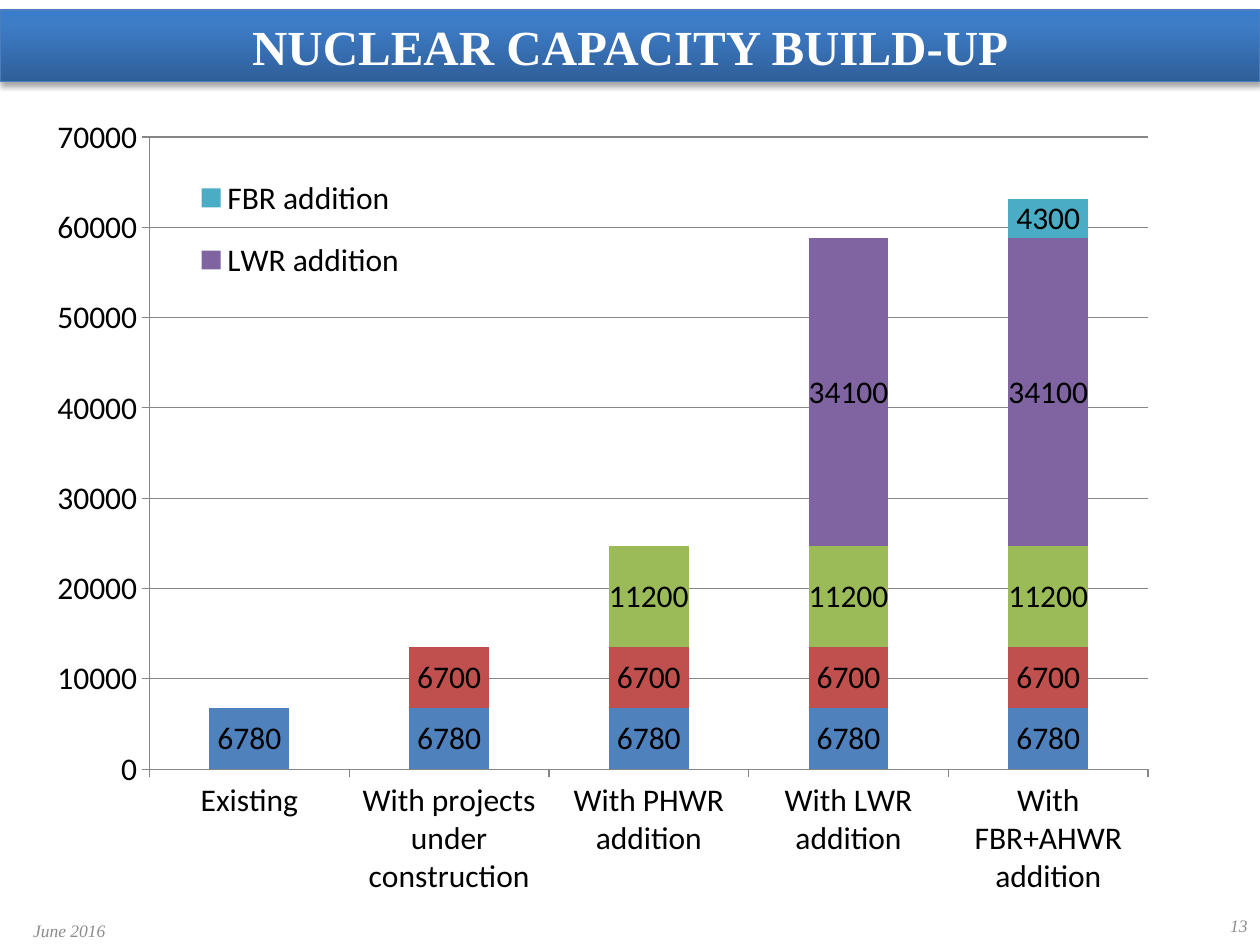
from lxml import etree
from pptx import Presentation
from pptx.chart.data import CategoryChartData
from pptx.dml.color import RGBColor
from pptx.enum.chart import XL_CHART_TYPE, XL_LEGEND_POSITION, XL_TICK_MARK
from pptx.enum.text import MSO_ANCHOR, PP_ALIGN
from pptx.oxml import parse_xml
from pptx.oxml.ns import nsdecls, qn
from pptx.util import Inches, Pt

COLORS = {
    "white": "FFFFFF", "black": "000000", "footer": "8C8C8C", "grid": "868686",
    "banner_line": "4B7EBC", "banner_dark": "2F5F99",
    "banner_mid": "3D7CC7", "banner_light": "3A7CCB",
}
HEADING = "NUCLEAR CAPACITY BUILD-UP"
STAGES = [
    "Existing", "With projects under construction", "With PHWR addition",
    "With LWR addition", "With FBR+AHWR addition",
]
ADDITIONS = [
    ("Existing", 6780, "4F81BD"),
    ("Under construction", 6700, "C0504D"),
    ("PHWR addition", 11200, "9BBB59"),
    ("LWR addition", 34100, "8064A2"),
    ("FBR addition", 4300, "4BACC6"),
]
UNLISTED = 3
FOOTERS = [
    ("13", (9.53, 7.19, 0.47, 0.31), PP_ALIGN.RIGHT, 0.1),
    ("June 2016", (0.16, 7.27, 0.78, 0.23), PP_ALIGN.CENTER, 0.05),
]
BANNER_STOPS = [(0, "banner_dark"), (80, "banner_mid"), (100, "banner_light")]
PLOT_BOX = (0.101, 0.027, 0.854, 0.811)
LEGEND_BOX = (0.14, 0.05, 0.18, 0.19)


def color(name):
    return RGBColor.from_string(COLORS[name])


def place(shape, box):
    shape.left, shape.top, shape.width, shape.height = map(Inches, box)


def style_text(shape, size, color_name, align, bold=False, italic=False):
    paragraph = shape.text_frame.paragraphs[0]
    paragraph.alignment = align
    font = paragraph.runs[0].font
    font.name, font.size = "Times New Roman", Pt(size)
    font.bold, font.italic = bold, italic
    font.color.rgb = color(color_name)


def add_banner(slide):
    banner = slide.shapes.title
    place(banner, (0, 0.08, 10, 0.57))
    banner.text_frame.text = HEADING
    banner.text_frame.vertical_anchor = MSO_ANCHOR.MIDDLE
    style_text(banner, 28, "white", PP_ALIGN.CENTER, bold=True)
    banner.line.color.rgb = color("banner_line")
    banner.line.width = Pt(0.75)
    stops = "".join(
        f'<a:gs pos="{position * 1000}"><a:srgbClr val="{COLORS[name]}"/></a:gs>'
        for position, name in BANNER_STOPS
    )
    outline = banner.element.spPr.find(qn("a:ln"))
    outline.addprevious(parse_xml(
        f'<a:gradFill {nsdecls("a")} rotWithShape="1"><a:gsLst>{stops}</a:gsLst>'
        '<a:lin ang="16200000" scaled="0"/></a:gradFill>'
    ))
    outline.addnext(parse_xml(
        f'<a:effectLst {nsdecls("a")}><a:outerShdw blurRad="40000" dist="23000" '
        f'dir="5400000" rotWithShape="0"><a:srgbClr val="{COLORS["black"]}">'
        '<a:alpha val="35000"/></a:srgbClr></a:outerShdw></a:effectLst>'
    ))


def manual_layout(box, inner=False):
    layout = etree.Element(qn("c:layout"))
    manual = etree.SubElement(layout, qn("c:manualLayout"))
    values = [("layoutTarget", "inner")] if inner else []
    values += [("xMode", "edge"), ("yMode", "edge"), *zip("xywh", box)]
    for tag, value in values:
        etree.SubElement(manual, qn(f"c:{tag}")).set("val", str(value))
    return layout


def set_layout(parent, box, before, inner=False):
    for existing in parent.findall(qn("c:layout")):
        parent.remove(existing)
    parent.find(qn(before)).addprevious(manual_layout(box, inner))


def format_legend(chart):
    chart.has_legend = True
    chart.legend.position = XL_LEGEND_POSITION.RIGHT
    chart.legend.include_in_layout = False
    legend = chart._chartSpace.chart.find(qn("c:legend"))
    set_layout(legend, LEGEND_BOX, "c:overlay")
    for index in range(UNLISTED):
        legend.find(qn("c:layout")).addprevious(parse_xml(
            f'<c:legendEntry {nsdecls("c")}><c:idx val="{index}"/>'
            '<c:delete val="1"/></c:legendEntry>'
        ))


def add_capacity_chart(slide):
    capacity = CategoryChartData()
    capacity.categories = STAGES
    for start, (name, megawatts, _) in enumerate(ADDITIONS):
        capacity.add_series(name, [None] * start + [megawatts] * (len(STAGES) - start))
    chart = slide.shapes.add_chart(
        XL_CHART_TYPE.COLUMN_STACKED,
        *map(Inches, (0.25, 0.92, 9.28, 6.19)), capacity,
    ).chart
    chart.has_title = False
    chart.font.name, chart.font.size = "Calibri", Pt(18)
    chart.font.color.rgb = color("black")

    plot = chart.plots[0]
    plot.gap_width, plot.overlap, plot.vary_by_categories = 150, 100, False
    for series, (_, _, fill) in zip(plot.series, ADDITIONS):
        series.format.fill.solid()
        series.format.fill.fore_color.rgb = RGBColor.from_string(fill)
        series.data_labels.show_value = True

    megawatt_axis = chart.value_axis
    megawatt_axis.minimum_scale, megawatt_axis.maximum_scale = 0, 70000
    megawatt_axis.major_unit = 10000
    megawatt_axis.has_major_gridlines = True
    for axis in (chart.category_axis, megawatt_axis):
        axis.major_tick_mark = XL_TICK_MARK.OUTSIDE
        axis.format.line.color.rgb = color("grid")
    megawatt_axis.major_gridlines.format.line.color.rgb = color("grid")

    set_layout(chart._chartSpace.chart.plotArea, PLOT_BOX, "c:barChart", inner=True)
    format_legend(chart)


def add_footers(slide):
    for text, box, align, margin in FOOTERS:
        footer = slide.shapes.add_textbox(*map(Inches, box))
        frame = footer.text_frame
        frame.text = text
        frame.word_wrap = True
        frame.vertical_anchor = MSO_ANCHOR.MIDDLE
        frame.margin_left = frame.margin_right = Inches(margin)
        style_text(footer, 10, "footer", align, italic=True)


def main():
    deck = Presentation()
    deck.slide_width, deck.slide_height = Inches(10), Inches(7.5)
    slide = deck.slides.add_slide(deck.slide_layouts[5])
    add_banner(slide)
    add_footers(slide)
    add_capacity_chart(slide)
    deck.save("out.pptx")


if __name__ == "__main__":
    main()
